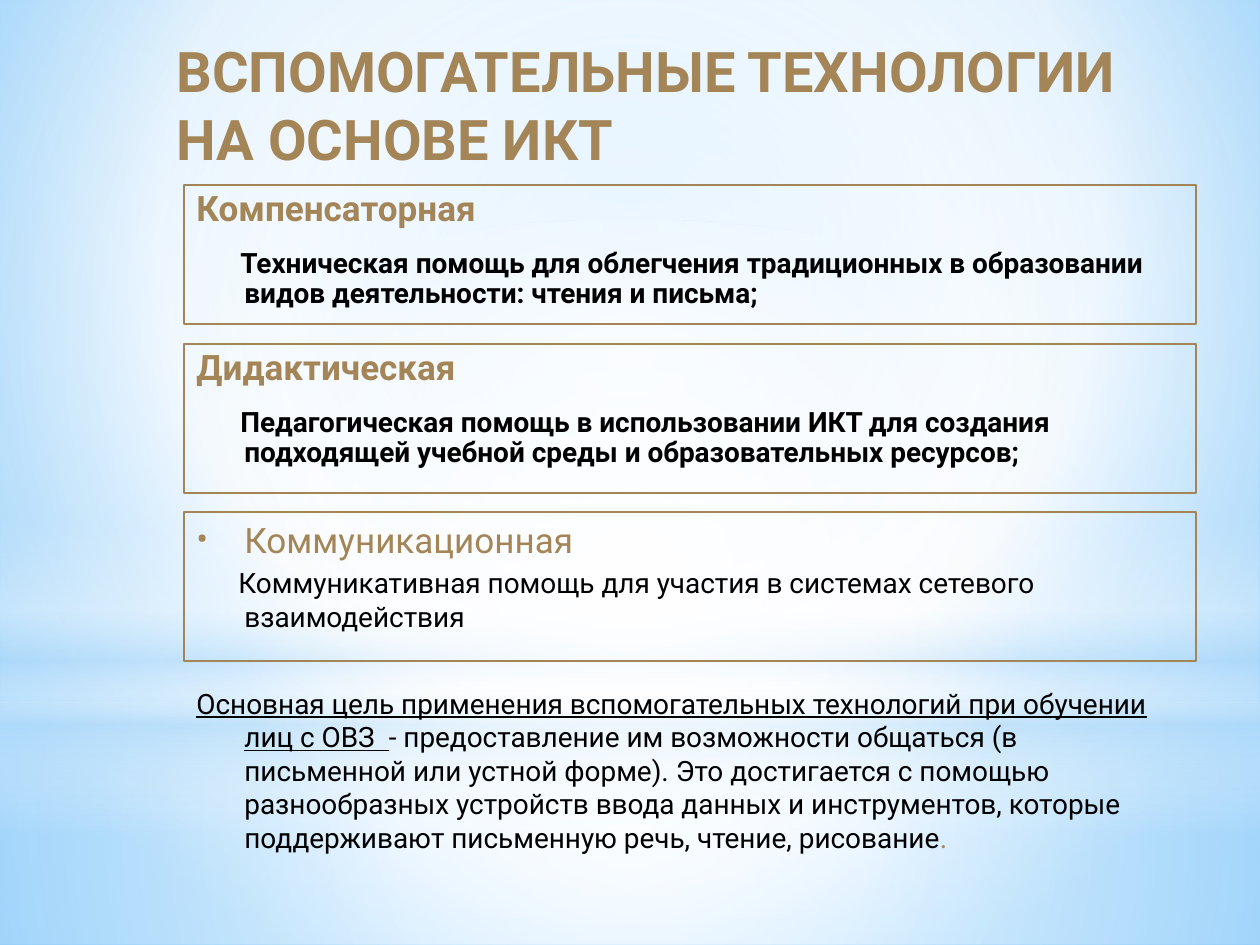
from dataclasses import dataclass

from lxml.etree import SubElement
from pptx import Presentation
from pptx.dml.color import RGBColor
from pptx.enum.shapes import MSO_SHAPE
from pptx.enum.text import MSO_ANCHOR, PP_ALIGN
from pptx.oxml.ns import qn
from pptx.util import Emu, Pt

EMU_PER_PX = 914400 / 126
COLORS = {"tan": "A38557", "black": "000000", "white": "FFFFFF",
          "pale": "B4DCFA", "sky": "9ED5FF", "blue": "5BB9FF"}
FONT = "Roboto"
HANGING = 48
PANEL_LEFT, PANEL_WIDTH = 184, 1012
CENTER = (50, 50, 50, 50)


@dataclass(frozen=True)
class Glow:
    """A soft background layer; without a focus its gradient is linear."""
    preset: MSO_SHAPE
    top: int
    height: int
    stops: tuple
    focus: tuple | None = CENTER


@dataclass(frozen=True)
class Panel:
    """A framed technology type with its heading and description."""
    heading: str
    description: str
    top: int
    height: int
    bold: bool = True
    bullet: str = ""
    line_spacing: float = 0.9
    gap: float = 11.5
    first_line: int = -4


GLOWS = (
    Glow(MSO_SHAPE.RECTANGLE, 703, 242,
         ((0, "white", 91), (37, "white", 76), (100, "pale", 79))),
    Glow(MSO_SHAPE.RECTANGLE, 0, 703,
         ((0, "white", 89), (48, "white", 62), (100, "pale", 79))),
    Glow(MSO_SHAPE.RECTANGLE, 519, 315,
         ((0, "white", 0), (29, "white", 30), (45, "pale", 40),
          (55, "white", 26), (65, "pale", 60), (100, "white", 0)), None),
    Glow(MSO_SHAPE.OVAL, 220, 703, ((0, "white", 100), (56, "white", 0))),
)

PANELS = (
    Panel("Компенсаторная",
          "Техническая помощь для облегчения традиционных в образовании "
          "видов деятельности: чтения и письма;", 185, 139),
    Panel("Дидактическая",
          "Педагогическая помощь в использовании ИКТ для создания "
          "подходящей учебной среды и образовательных ресурсов;", 344, 149),
    Panel("Коммуникационная",
          "Коммуникативная помощь для участия в системах сетевого "
          "взаимодействия", 512, 149, bold=False, bullet="•",
          line_spacing=1.0, gap=3.2, first_line=-6),
)


def px(length: int) -> Emu:
    """Turn pixels into EMU."""
    return Emu(round(length * EMU_PER_PX))


def rgb(color: str) -> RGBColor:
    """Look up a named colour."""
    return RGBColor.from_string(COLORS[color])


def set_gradient(fill, element, stops: tuple, focus: tuple | None) -> None:
    """Give a fill a circular gradient, or a vertical one without focus."""
    fill.solid()
    solid = element.find(".//" + qn("a:solidFill"))
    gradient = solid.makeelement(qn("a:gradFill"), {"rotWithShape": "1"})
    solid.getparent().replace(solid, gradient)
    stop_list = SubElement(gradient, qn("a:gsLst"))
    for position, color, opacity in stops:
        stop = SubElement(stop_list, qn("a:gs"), pos=str(position * 1000))
        tint = SubElement(stop, qn("a:srgbClr"), val=COLORS[color])
        if opacity < 100:
            SubElement(tint, qn("a:alpha"), val=str(opacity * 1000))
    if focus is None:
        SubElement(gradient, qn("a:lin"), ang="5400000", scaled="0")
        return
    circle = SubElement(gradient, qn("a:path"), path="circle")
    sides = {side: str(share * 1000) for side, share in zip("ltrb", focus)}
    SubElement(circle, qn("a:fillToRect"), **sides)


def add_glow(slide, glow: Glow, width: int) -> None:
    """Draw one full-width background layer."""
    layer = slide.shapes.add_shape(
        glow.preset, 0, px(glow.top), px(width), px(glow.height))
    layer.shadow.inherit = False
    layer.line.fill.background()
    set_gradient(layer.fill, layer.element.spPr, glow.stops, glow.focus)


def write(paragraph, text: str, *, size: int = 16, color: str = "black",
          bold: bool = False, underline: bool = False) -> None:
    """Append formatted text to a paragraph, breaking at line ends."""
    for index, line in enumerate(text.split("\n")):
        if index:
            paragraph.add_line_break()
        run = paragraph.add_run()
        run.text = line
        run.font.name = FONT
        run.font.size = Pt(size)
        run.font.bold = bold
        run.font.underline = underline
        run.font.color.rgb = rgb(color)


def set_layout(paragraph, first_line: int = -HANGING, bullet: str = "",
               line_spacing: float = 1.0, gap: float = 0) -> None:
    """Set a hanging indent, spacing and an optional bullet."""
    paragraph.alignment = PP_ALIGN.LEFT
    paragraph.line_spacing = line_spacing
    paragraph.space_before = Pt(gap)
    properties = paragraph._p.get_or_add_pPr()
    properties.set("marL", str(px(HANGING)))
    properties.set("indent", str(px(first_line)))
    if bullet:
        bullet_color = SubElement(properties, qn("a:buClr"))
        SubElement(bullet_color, qn("a:srgbClr"), val=COLORS["tan"])
        SubElement(properties, qn("a:buFont"), typeface=FONT)
        SubElement(properties, qn("a:buChar"), char=bullet)


def add_panel(slide, panel: Panel) -> None:
    """Draw one framed panel."""
    frame = slide.shapes.add_shape(
        MSO_SHAPE.RECTANGLE, px(PANEL_LEFT), px(panel.top),
        px(PANEL_WIDTH), px(panel.height))
    frame.shadow.inherit = False
    frame.fill.background()
    frame.line.color.rgb = rgb("tan")
    frame.line.width = Pt(0.75)
    body = frame.text_frame
    body.word_wrap = True
    body.vertical_anchor = MSO_ANCHOR.TOP
    heading = body.paragraphs[0]
    set_layout(heading, bullet=panel.bullet, line_spacing=panel.line_spacing)
    write(heading, panel.heading, size=20, color="tan", bold=panel.bold)
    description = body.add_paragraph()
    set_layout(description, panel.first_line,
               line_spacing=panel.line_spacing, gap=panel.gap)
    write(description, panel.description, bold=panel.bold)


def add_text_area(slide, left: int, top: int, width: int, height: int,
                  anchor: MSO_ANCHOR):
    """Add a wrapping text box and return its first paragraph."""
    area = slide.shapes.add_textbox(px(left), px(top), px(width), px(height))
    area.text_frame.word_wrap = True
    area.text_frame.vertical_anchor = anchor
    return area.text_frame.paragraphs[0]


def main() -> None:
    """Build the slide and save it."""
    deck = Presentation()
    width, height = 1260, 945
    deck.slide_width, deck.slide_height = px(width), px(height)
    slide = deck.slides.add_slide(deck.slide_layouts[6])
    set_gradient(slide.background.fill, slide.element,
                 ((0, "sky", 100), (60, "white", 100), (100, "blue", 100)),
                 (20, 10, 20, 60))
    for glow in GLOWS:
        add_glow(slide, glow, width)

    title = add_text_area(slide, 164, 45, 1071, 118, MSO_ANCHOR.MIDDLE)
    write(title, "ВСПОМОГАТЕЛЬНЫЕ ТЕХНОЛОГИИ\nНА ОСНОВЕ ИКТ",
          size=32, color="tan", bold=True)
    for panel in PANELS:
        add_panel(slide, panel)

    goal = add_text_area(slide, PANEL_LEFT, 680, PANEL_WIDTH, 208,
                         MSO_ANCHOR.TOP)
    set_layout(goal)
    write(goal, "Основная цель применения вспомогательных технологий "
          "при обучении лиц с ОВЗ  ", underline=True)
    write(goal, "- предоставление им возможности общаться (в письменной или "
          "устной форме). Это достигается с помощью разнообразных устройств "
          "ввода данных и инструментов, которые поддерживают письменную "
          "речь, чтение, рисование")
    write(goal, ".", color="tan")
    deck.save("out.pptx")


if __name__ == "__main__":
    main()
